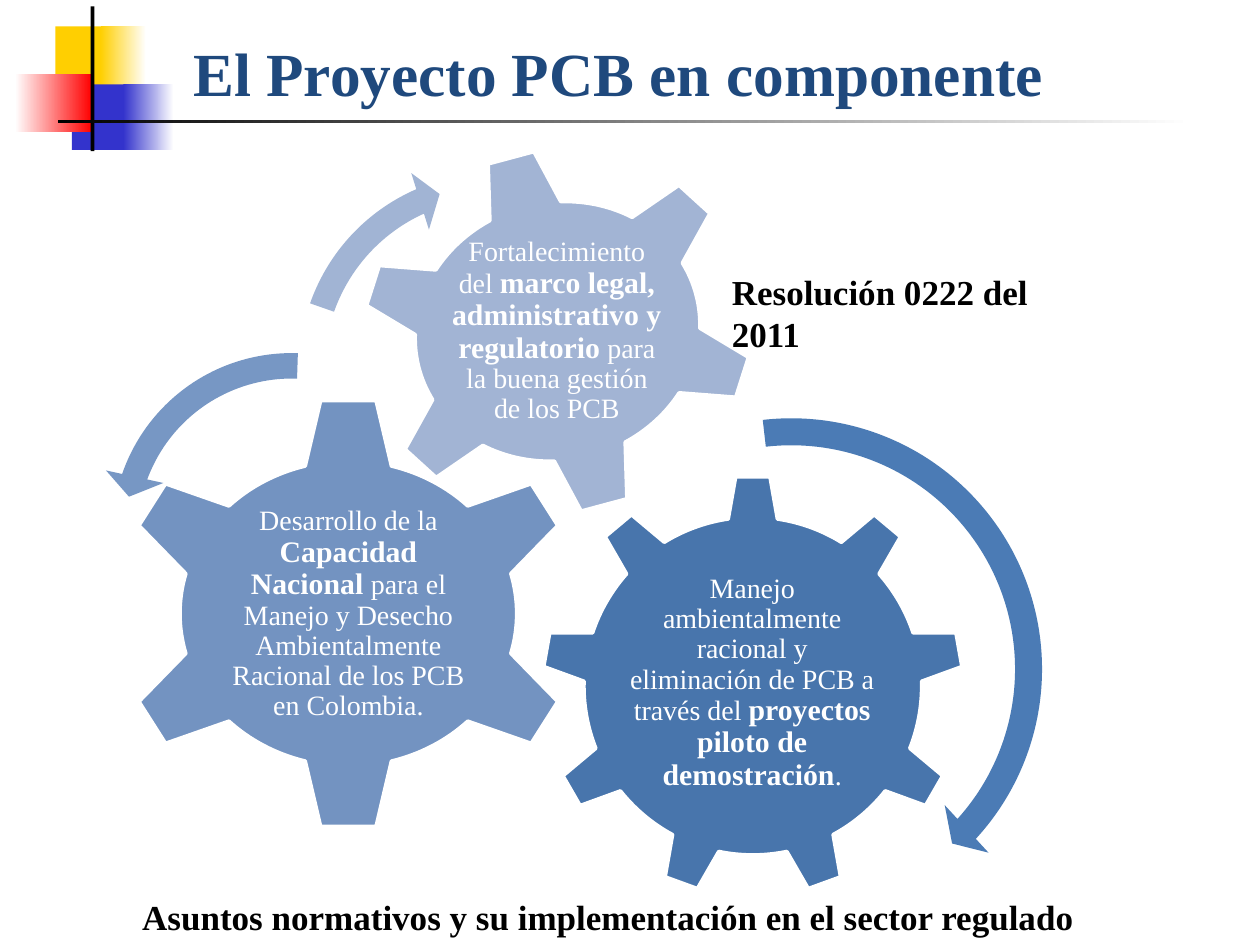
import pptx
import pptx.util
import pptx.dml.color
import pptx.enum.shapes
import pptx.enum.text

Inches = pptx.util.Inches
SHAPES = pptx.enum.shapes.MSO_SHAPE
ALIGN = pptx.enum.text.PP_ALIGN
ANCHOR = pptx.enum.text.MSO_ANCHOR
FONT = "Times New Roman"
COLORS = {
    "white": "FFFFFF", "black": "000000", "title": "1F497D",
    "yellow": "FFCF01", "blue": "3333CC", "red": "FF0000",
    "pilot_gear": "4875AC", "capacity_gear": "7393C1", "legal_gear": "A2B4D4",
    "pilot_arrow": "4B7BB5", "capacity_arrow": "7797C4", "legal_arrow": "A1B4D4",
}


def color(name):
    return pptx.dml.color.RGBColor.from_string(COLORS[name])


class SlideBuilder:
    def __init__(self, slide):
        self.slide = slide

    def shape(self, kind, box, fill, rotation=0, adjustments=()):
        shape = self.slide.shapes.add_shape(kind, *map(Inches, box))
        shape.shadow.inherit = False
        shape.rotation = rotation
        for index, value in enumerate(adjustments):
            shape.adjustments[index] = value
        shape.fill.solid()
        shape.fill.fore_color.rgb = color(fill)
        shape.line.fill.background()
        return shape

    def fade(self, box, start, end):
        shape = self.shape(SHAPES.RECTANGLE, box, start)
        shape.fill.gradient()
        shape.fill.gradient_angle = 0
        for stop, name in zip(shape.fill.gradient_stops, (start, end)):
            stop.color.rgb = color(name)

    def text(self, box, content, size, fill):
        """Add a bold, left-aligned line of text."""
        shape = self.slide.shapes.add_textbox(*map(Inches, box))
        shape.text_frame.word_wrap = True
        paragraph = shape.text_frame.paragraphs[0]
        paragraph.text = content
        self.style(paragraph.font, size, fill)
        paragraph.font.bold = True
        return shape

    def style(self, font, size, fill):
        font.name = FONT
        font.size = pptx.util.Pt(size)
        font.color.rgb = color(fill)

    def title(self, box, content):
        frame = self.text(box, content, 35, "title").text_frame
        frame.vertical_anchor = ANCHOR.MIDDLE
        frame.paragraphs[0].alignment = ALIGN.CENTER

    def gear(self, kind, box, fill, text_box, parts, rotation=0):
        """Add a gear and its caption; the middle part is bold."""
        gear = self.shape(kind, box, fill, rotation)
        gear.line.color.rgb = color("white")
        gear.line.width = pptx.util.Pt(2)
        frame = self.slide.shapes.add_textbox(*map(Inches, text_box)).text_frame
        frame.word_wrap = True
        frame.vertical_anchor = ANCHOR.MIDDLE
        frame.margin_left = frame.margin_right = Inches(0.02)
        frame.margin_top = frame.margin_bottom = Inches(0.02)
        paragraph = frame.paragraphs[0]
        paragraph.alignment = ALIGN.CENTER
        paragraph.line_spacing = 0.9
        for index, part in enumerate(parts):
            run = paragraph.add_run()
            run.text = part
            bold = index == 1
            self.style(run.font, 17 if bold else 16, "white")
            run.font.bold = bold


def main():
    presentation = pptx.Presentation()
    presentation.slide_width = Inches(10)
    presentation.slide_height = Inches(7.5)
    builder = SlideBuilder(presentation.slides.add_slide(presentation.slide_layouts[6]))

    # Title and corner ornament
    builder.title((0.41, 0.21, 9, 0.73), "El Proyecto PCB en componente")
    builder.shape(SHAPES.RECTANGLE, (0.44, 0.21, 0.48, 0.52), "yellow")
    builder.fade((0.8, 0.21, 0.36, 0.52), "yellow", "white")
    builder.shape(SHAPES.RECTANGLE, (0.57, 0.67, 0.46, 0.52), "blue")
    builder.fade((0.98, 0.67, 0.4, 0.52), "blue", "white")
    builder.fade((0.12, 0.59, 0.61, 0.46), "white", "red")
    builder.shape(SHAPES.RECTANGLE, (0.72, 0.05, 0.03, 1.15), "black")
    builder.fade((0.46, 0.95, 9, 0.03), "black", "white")

    # Gears, one per project component
    builder.gear(SHAPES.GEAR_9, (4.3, 3.77, 3.35, 3.35), "pilot_gear",
                 (4.97, 4.56, 2, 1.72),
                 ("Manejo ambientalmente racional y eliminación de PCB a través del ",
                  "proyectos piloto de demostración", "."))
    builder.gear(SHAPES.GEAR_6, (0.91, 3.14, 3.71, 3.46), "capacity_gear",
                 (1.82, 4.02, 1.89, 1.71),
                 ("Desarrollo de la ", "Capacidad Nacional ",
                  "para el Manejo y Desecho Ambientalmente Racional de los PCB "
                  "en Colombia."))
    builder.gear(SHAPES.GEAR_6, (2.85, 1.17, 3.15, 2.92), "legal_gear",
                 (3.55, 1.8, 1.74, 1.66),
                 ("Fortalecimiento del ", "marco legal, administrativo y regulatorio",
                  " para la buena gestión de los PCB"), rotation=345)

    # Rotation arrows
    builder.shape(SHAPES.CIRCULAR_ARROW, (4.14, 3.17, 4.28, 4.28), "pilot_arrow",
                  adjustments=(0.05, 2.99, 25.41, 158.08, 0.06))
    builder.shape(SHAPES.LEFT_CIRCULAR_ARROW, (0.76, 2.67, 3.11, 3.11), "capacity_arrow",
                  24.7, (0.065, 4.3, 104.89, 148.38, 0.075))
    builder.shape(SHAPES.CIRCULAR_ARROW, (2.24, 1.24, 3.36, 3.36), "legal_arrow",
                  24.2, (0.06, 3.94, 133.14, 105.08, 0.07))

    # Notes on regulation
    builder.text((1.03, 7.06, 8.74, 0.44),
                 "Asuntos normativos y su implementación en el sector regulado",
                 20, "black")
    builder.text((5.71, 2.1, 3.1, 0.44), "Resolución 0222 del 2011", 20, "black")

    presentation.save("out.pptx")


if __name__ == "__main__":
    main()
